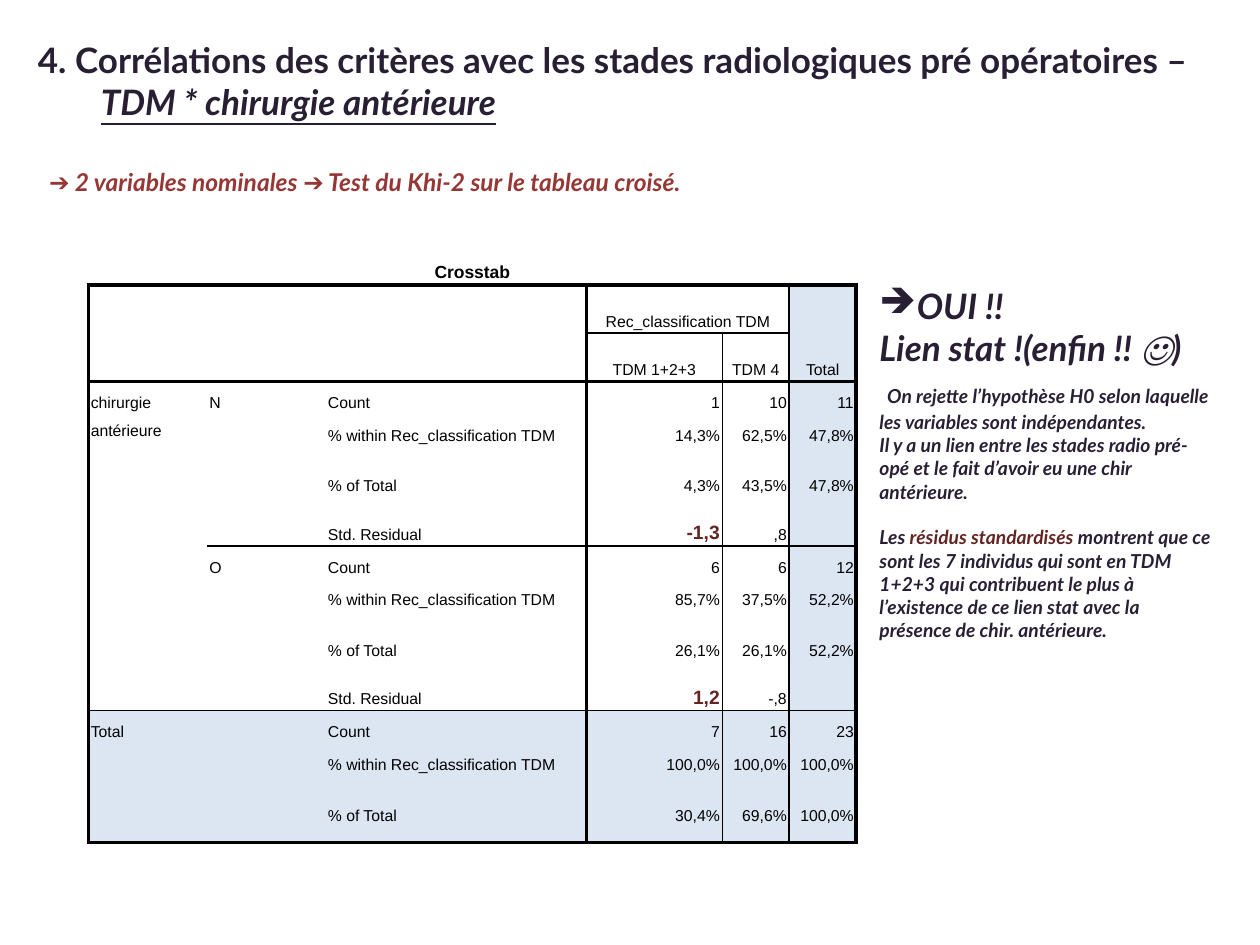
from dataclasses import dataclass
from typing import Optional

from lxml.etree import SubElement
from pptx import Presentation
from pptx.dml.color import RGBColor
from pptx.enum.text import MSO_ANCHOR as Anchor, MSO_AUTO_SIZE as AutoSize, PP_ALIGN as Align
from pptx.oxml.ns import qn
from pptx.util import Cm, Pt

INK = RGBColor(0x29, 0x1F, 0x35)
RED = RGBColor(0x95, 0x37, 0x35)
MAROON = RGBColor(0x63, 0x25, 0x23)
BLACK = RGBColor(0, 0, 0)
WHITE = RGBColor(0xFF, 0xFF, 0xFF)
PALE_BLUE = RGBColor(0xDC, 0xE6, 0xF2)

THICK, THIN = 2.25, 1
COLUMN_WIDTHS = [2.39, 2.39, 5.26, 2.74, 1.35, 1.35]
GROUP_HEIGHTS = [0.64, 1.02, 0.97, 0.64]
ROW_HEIGHTS = [0.64, 0.97, 0.97] + GROUP_HEIGHTS * 2 + GROUP_HEIGHTS[:3]
VERTICAL_RULES = {0: THICK, 3: THICK, 4: THIN, 5: THIN, 6: THICK}
HORIZONTAL_RULES = {1: THICK, 2: THIN, 3: THICK, 7: THIN, 11: THIN, 14: THICK}
SPANS = {(0, 0): (1, 6), (1, 3): (1, 2), (1, 5): (2, 1), (3, 0): (8, 1),
         (3, 1): (4, 1), (7, 1): (4, 1), (11, 0): (3, 2)}
MEASURES = ["Count", "% within Rec_classification TDM", "% of Total", "Std. Residual"]
HEADINGS = {(0, 0): "Crosstab", (1, 3): "Rec_classification TDM", (1, 5): "Total",
            (2, 3): "TDM 1+2+3", (2, 4): "TDM 4"}
LABELS = {(3, 0): "chirurgie antérieure", (3, 1): "N", (7, 1): "O", (11, 0): "Total"}


@dataclass(frozen=True)
class Group:
    first_row: int
    results: list[tuple[str, ...]]


@dataclass(frozen=True)
class Phrase:
    text: str
    size: Optional[float] = None
    color: Optional[RGBColor] = None
    italic: Optional[bool] = None
    underline: Optional[bool] = None


@dataclass(frozen=True)
class Line:
    phrases: list[Phrase]
    size: float
    space_before: float = 0
    bullet: str = ""


GROUPS = [
    Group(3, [("1", "10", "11"), ("14,3%", "62,5%", "47,8%"),
              ("4,3%", "43,5%", "47,8%"), ("-1,3", ",8")]),
    Group(7, [("6", "6", "12"), ("85,7%", "37,5%", "52,2%"),
              ("26,1%", "26,1%", "52,2%"), ("1,2", "-,8")]),
    Group(11, [("7", "16", "23"), ("100,0%", "100,0%", "100,0%"),
               ("30,4%", "69,6%", "100,0%")]),
]

CONCLUSIONS = [
    Line([Phrase("OUI !!")], 20, bullet="➔"),
    Line([Phrase("Lien stat !(enfin !! ☺)")], 20),
    Line([Phrase(" ", size=20),
          Phrase("On rejette l’hypothèse H0 selon laquelle les variables sont indépendantes.")], 11),
    Line([Phrase("Il y a un lien entre les stades radio pré-opé et le fait d’avoir eu "
                 "une chir antérieure.")], 11),
    Line([Phrase("Les "), Phrase("résidus standardisés ", color=MAROON),
          Phrase("montrent que ce sont les 7 individus qui sont en TDM 1+2+3 qui contribuent "
                 "le plus à l’existence de ce lien stat avec la présence de chir. antérieure.")],
         11, space_before=13),
]


def style_font(font, name: str, size: float, color: RGBColor, bold: bool, italic=None) -> None:
    font.name, font.size, font.bold, font.italic = name, Pt(size), bold, italic
    font.color.rgb = color


def add_phrases(paragraph, phrases: list[Phrase]) -> None:
    for phrase in phrases:
        run = paragraph.add_run()
        run.text = phrase.text
        run.font.italic, run.font.underline = phrase.italic, phrase.underline
        if phrase.size:
            run.font.size = Pt(phrase.size)
        if phrase.color:
            run.font.color.rgb = phrase.color


def write_title(slide) -> None:
    title = slide.shapes.title
    title.left, title.top, title.width, title.height = Cm(0.51), Cm(0.64), Cm(23.88), Cm(4.52)
    frame = title.text_frame
    frame.word_wrap, frame.auto_size, frame.vertical_anchor = True, AutoSize.NONE, Anchor.TOP
    heading = frame.paragraphs[0]
    heading.alignment = Align.LEFT
    properties = heading._p.get_or_add_pPr()
    properties.set("marL", str(Cm(1.27)))
    properties.set("indent", str(-Cm(1.27)))
    style_font(heading.font, "Lato", 20, INK, True)
    add_phrases(heading, [
        Phrase("4. Corrélations des critères avec les stades radiologiques pré opératoires – "),
        Phrase("TDM * chirurgie antérieure", italic=True, underline=True)])


def add_lines(slide, left: float, top: float, width: float, height: float,
              color: RGBColor, lines: list[Line]) -> None:
    frame = slide.shapes.add_textbox(Cm(left), Cm(top), Cm(width), Cm(height)).text_frame
    frame.word_wrap, frame.auto_size = True, AutoSize.SHAPE_TO_FIT_TEXT
    for index, line in enumerate(lines):
        paragraph = frame.add_paragraph() if index else frame.paragraphs[0]
        paragraph.space_before = Pt(line.space_before)
        if line.bullet:
            SubElement(paragraph._p.get_or_add_pPr(), qn("a:buChar"), char=line.bullet)
        style_font(paragraph.font, "Lato", line.size, color, True, True)
        add_phrases(paragraph, line.phrases)


def vertical_rule(row: int, x: int) -> float:
    if row == 0 or (row == 1 and x == 4):
        return 0
    return VERTICAL_RULES.get(x, 0)


def horizontal_rule(y: int, column: int) -> float:
    if (y == 2 and column not in (3, 4)) or (y == 7 and column == 0):
        return 0
    return HORIZONTAL_RULES.get(y, 0)


def draw_borders(cell, row: int, column: int) -> None:
    rows, columns = SPANS.get((row, column), (1, 1))
    widths = {"L": vertical_rule(row, column), "R": vertical_rule(row, column + columns),
              "T": horizontal_rule(row, column), "B": horizontal_rule(row + rows, column)}
    properties = cell._tc.get_or_add_tcPr()
    for side, width in widths.items():
        border = SubElement(properties, qn(f"a:ln{side}"), w=str(Pt(width)))
        if width:
            SubElement(SubElement(border, qn("a:solidFill")), qn("a:srgbClr"), val=str(BLACK))
        else:
            SubElement(border, qn("a:noFill"))


def write_cell(cell, text: str, alignment: Align, anchor: Anchor,
               size: float = 9, color: RGBColor = BLACK, bold: bool = False) -> None:
    cell.vertical_anchor = anchor
    paragraph = cell.text_frame.paragraphs[0]
    paragraph.text = text
    paragraph.alignment, paragraph.line_spacing = alignment, Pt(16)
    style_font(paragraph.font, "Arial", size, color, bold)


def add_crosstab(slide) -> None:
    crosstab = slide.shapes.add_table(len(ROW_HEIGHTS), len(COLUMN_WIDTHS), Cm(1.78), Cm(5.08),
                                      Cm(sum(COLUMN_WIDTHS)), Cm(sum(ROW_HEIGHTS))).table
    crosstab.first_row = crosstab.horz_banding = False
    for column, width in zip(crosstab.columns, COLUMN_WIDTHS):
        column.width = Cm(width)
    for row, height in zip(crosstab.rows, ROW_HEIGHTS):
        row.height = Cm(height)
    for r in range(len(ROW_HEIGHTS)):
        for c in range(len(COLUMN_WIDTHS)):
            cell = crosstab.cell(r, c)
            cell.margin_left = cell.margin_right = cell.margin_top = cell.margin_bottom = Cm(0.05)
            draw_borders(cell, r, c)
            cell.fill.solid()
            cell.fill.fore_color.rgb = PALE_BLUE if r >= 11 or (c == 5 and r) else WHITE
            write_cell(cell, "", Align.LEFT, Anchor.TOP)
    for (r, c), (rows, columns) in SPANS.items():
        crosstab.cell(r, c).merge(crosstab.cell(r + rows - 1, c + columns - 1))
    for (r, c), text in HEADINGS.items():
        is_caption = r == 0
        write_cell(crosstab.cell(r, c), text, Align.CENTER,
                   Anchor.MIDDLE if is_caption else Anchor.BOTTOM,
                   size=10 if is_caption else 9, bold=is_caption)
    for (r, c), text in LABELS.items():
        write_cell(crosstab.cell(r, c), text, Align.LEFT, Anchor.TOP)
    for group in GROUPS:
        for r, (measure, results) in enumerate(zip(MEASURES, group.results), group.first_row):
            write_cell(crosstab.cell(r, 2), measure, Align.LEFT, Anchor.TOP)
            for c, result in enumerate(results, 3):
                key = measure == "Std. Residual" and c == 3
                write_cell(crosstab.cell(r, c), result, Align.RIGHT, Anchor.TOP,
                           11 if key else 9, MAROON if key else BLACK, key)


def main() -> None:
    deck = Presentation()
    deck.slide_width, deck.slide_height = Cm(25.4), Cm(19.05)
    slide = deck.slides.add_slide(deck.slide_layouts[5])
    write_title(slide)
    add_lines(slide, 0.74, 3.25, 22.43, 0.86, RED, [
        Line([Phrase("➔ 2 variables nominales ➔ Test du Khi-2 sur le tableau croisé.")], 14)])
    add_crosstab(slide)
    add_lines(slide, 17.48, 5.61, 7.21, 9.32, INK, CONCLUSIONS)
    deck.save("out.pptx")


if __name__ == "__main__":
    main()
